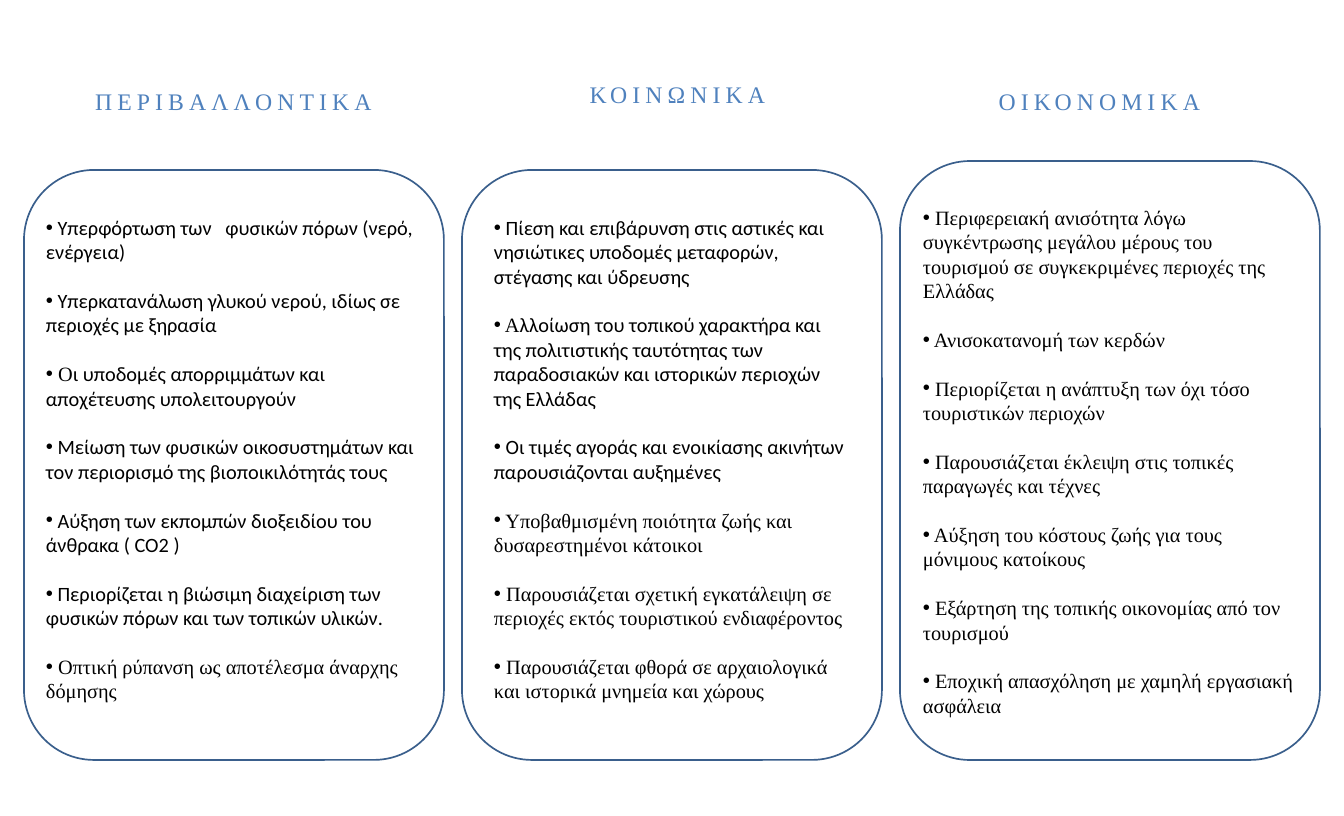
import pptx
import pptx.util
import pptx.dml.color
import pptx.enum.shapes
import pptx.enum.text
import pptx.oxml.ns
import lxml.etree

SANS, SERIF = "Calibri", "Times New Roman"

# Content: each item is a list of (text, font) runs; boxes are (left, top, width, height) in px
COLUMNS = [
    {
        "heading": "ΠΕΡΙΒΑΛΛΟΝΤΙΚΑ",
        "heading_box": (57, 81, 353, 41),
        "card_top": 170,
        "list_box": (34, 209, 400, 529),
        "items": [
            [("Υπερφόρτωση των   φυσικών πόρων (νερό, ενέργεια)", SANS)],
            [("Υπερκατανάλωση γλυκού νερού, ιδίως σε περιοχές με ξηρασία", SANS)],
            [("Ο", SERIF), ("ι υποδομές απορριμμάτων και αποχέτευσης υπολειτουργούν", SANS)],
            [("Μείωση των φυσικών οικοσυστημάτων και τον περιορισμό της βιοποικιλότητάς τους", SANS)],
            [("Αύξηση των εκπομπών διοξειδίου του άνθρακα ( CO2 )", SANS)],
            [("Περιορίζεται η βιώσιμη διαχείριση των φυσικών πόρων και των τοπικών υλικών.", SANS)],
            [("Οπτική ρύπανση ως αποτέλεσμα άναρχης δόμησης", SERIF)],
        ],
    },
    {
        "heading": "ΚΟΙΝΩΝΙΚΑ",
        "heading_box": (520, 74, 315, 41),
        "card_top": 170,
        "list_box": (482, 209, 382, 529),
        "items": [
            [("Πίεση και επιβάρυνση στις αστικές και νησιώτικες υποδομές μεταφορών, "
              "στέγασης και ύδρευσης", SANS)],
            [("Α", SERIF), ("λλοίωση του τοπικού χαρακτήρα και της πολιτιστικής ταυτότητας των "
                            "παραδοσιακών και ιστορικών περιοχών της Ελλάδας", SANS)],
            [("Οι τιμές αγοράς και ενοικίασης ακινήτων παρουσιάζονται αυξημένες", SANS)],
            [("Υποβαθμισμένη ποιότητα ζωής και δυσαρεστημένοι κάτοικοι", SERIF)],
            [("Παρουσιάζεται σχετική εγκατάλειψη σε περιοχές εκτός τουριστικού ενδιαφέροντος", SERIF)],
            [("Παρουσιάζεται φθορά σε αρχαιολογικά και ιστορικά μνημεία και χώρους", SERIF)],
        ],
    },
    {
        "heading": "ΟΙΚΟΝΟΜΙΚΑ",
        "heading_box": (952, 81, 295, 41),
        "card_top": 161,
        "list_box": (911, 199, 400, 529),
        "items": [
            [("Περιφερειακή ανισότητα λόγω συγκέντρωσης μεγάλου μέρους του τουρισμού "
              "σε συγκεκριμένες περιοχές της Ελλάδας", SERIF)],
            [("Ανισοκατανομή των κερδών", SERIF)],
            [("Περιορίζεται η ανάπτυξη των όχι τόσο τουριστικών περιοχών", SERIF)],
            [("Παρουσιάζεται έκλειψη στις τοπικές παραγωγές και τέχνες", SERIF)],
            [("Αύξηση του κόστους ζωής για τους μόνιμους κατοίκους", SERIF)],
            [("Εξάρτηση της τοπικής οικονομίας από τον τουρισμού", SERIF)],
            [("Εποχική απασχόληση με χαμηλή εργασιακή ασφάλεια", SERIF)],
        ],
    },
]

# Layout in px
PX = 914400 / 122
SLIDE_WIDTH, SLIDE_HEIGHT = 1344, 816
CARD_LEFT, CARD_PITCH, CARD_WIDTH, CARD_BOTTOM = 24, 438, 420, 760

# Formats
LINE_HEIGHT = pptx.util.Pt(14.4)
HEADING_FORMAT = {"size": pptx.util.Pt(14), "name": SERIF}
ITEM_FORMAT = {"size": pptx.util.Pt(12)}
HEADING_COLOR, ITEM_COLOR, CARD_LINE_COLOR = "4F81BD", "000000", "3A5F8C"
HEADING_TRACKING = "300"


def emu(*lengths):
    return [round(length * PX) for length in lengths]


def color(value):
    return pptx.dml.color.RGBColor.from_string(value)


def set_attributes(target, values):
    for name, value in values.items():
        setattr(target, name, value)


def add_text_frame(slide, box):
    frame = slide.shapes.add_textbox(*emu(*box)).text_frame
    frame.word_wrap = True
    return frame


def add_run(paragraph, text, font_format, font_color):
    run = paragraph.add_run()
    run.text = text
    set_attributes(run.font, font_format)
    run.font.color.rgb = color(font_color)
    return run


def add_bullet(paragraph):
    properties = paragraph._p.get_or_add_pPr()
    properties.set("marL", "0")
    properties.set("indent", "0")
    for tag, key, value in (("a:buFont", "typeface", "Arial"), ("a:buChar", "char", "•")):
        lxml.etree.SubElement(properties, pptx.oxml.ns.qn(tag)).set(key, value)


def add_heading(slide, text, box):
    paragraph = add_text_frame(slide, box).paragraphs[0]
    paragraph.alignment = pptx.enum.text.PP_ALIGN.CENTER
    run = add_run(paragraph, text, HEADING_FORMAT, HEADING_COLOR)
    run.font._element.set("spc", HEADING_TRACKING)


def add_card(slide, left, top):
    card = slide.shapes.add_shape(
        pptx.enum.shapes.MSO_SHAPE.ROUNDED_RECTANGLE,
        *emu(left, top, CARD_WIDTH, CARD_BOTTOM - top))
    card.shadow.inherit = False
    card.fill.background()
    card.line.color.rgb = color(CARD_LINE_COLOR)
    card.line.width = pptx.util.Pt(1)


def add_list(slide, items, box):
    frame = add_text_frame(slide, box)
    for index, runs in enumerate(items):
        paragraph = frame.add_paragraph() if index else frame.paragraphs[0]
        add_bullet(paragraph)
        set_attributes(paragraph, {"line_spacing": LINE_HEIGHT,
                                   "space_before": LINE_HEIGHT if index else 0})
        for position, (text, font_name) in enumerate(runs):
            # One space separates the bullet from its text
            text = text if position else " " + text
            add_run(paragraph, text, {**ITEM_FORMAT, "name": font_name}, ITEM_COLOR)


def main():
    presentation = pptx.Presentation()
    presentation.slide_width, presentation.slide_height = emu(SLIDE_WIDTH, SLIDE_HEIGHT)
    slide = presentation.slides.add_slide(presentation.slide_layouts[6])

    # Three columns: heading, rounded card, bullet list
    for index, column in enumerate(COLUMNS):
        add_heading(slide, column["heading"], column["heading_box"])
        add_card(slide, CARD_LEFT + index * CARD_PITCH, column["card_top"])
        add_list(slide, column["items"], column["list_box"])

    presentation.save("out.pptx")


if __name__ == "__main__":
    main()
